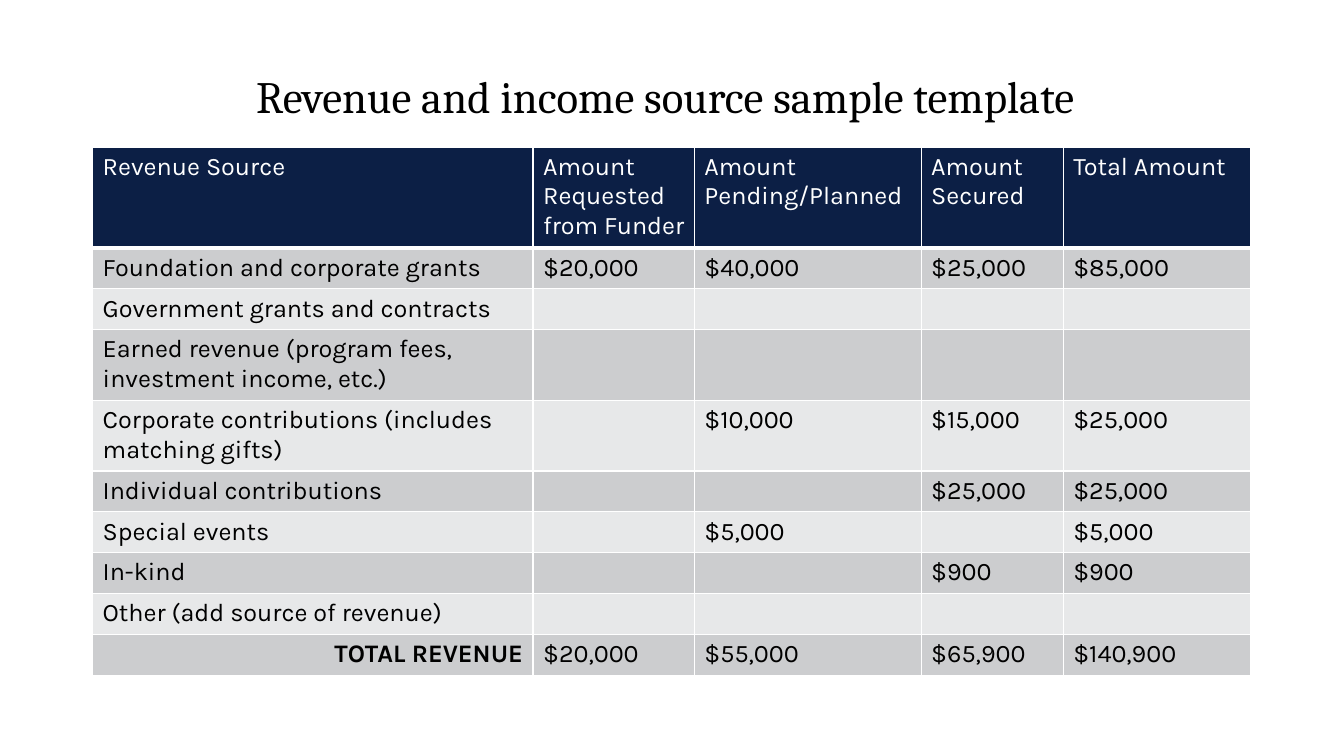
from pptx import Presentation
from pptx.dml.color import RGBColor
from pptx.enum import text
from pptx.oxml import parse_xml
from pptx.oxml.ns import nsdecls
from pptx.util import Pt

COLORS = {"navy": "0C1F45", "dark": "CCCDCF", "light": "E7E8E9",
          "white": "FFFFFF", "black": "000000"}
TITLE = {"name": "Cambria", "size": Pt(32)}
BODY = {"name": "Karla", "size": Pt(18)}

COLUMN_WIDTHS = [314.6, 115.2, 162, 101.5, 133.9]
HEADER_HEIGHT, ROW_HEIGHT, TALL_HEIGHT = 70.2, 29.2, 49.3
TALL_ROWS = (3, 4)
REVENUE = [
    ["Revenue Source", "Amount Requested from Funder", "Amount Pending/Planned",
     "Amount Secured", "Total Amount"],
    ["Foundation and corporate grants", "$20,000", "$40,000", "$25,000", "$85,000"],
    ["Government grants and contracts", "", "", "", ""],
    ["Earned revenue (program fees, investment income, etc.)", "", "", "", ""],
    ["Corporate contributions (includes matching gifts)", "", "$10,000", "$15,000", "$25,000"],
    ["Individual contributions", "", "", "$25,000", "$25,000"],
    ["Special events", "", "$5,000", "", "$5,000"],
    ["In-kind", "", "", "$900", "$900"],
    ["Other (add source of revenue)", "", "", "", ""],
    ["TOTAL REVENUE", "$20,000", "$55,000", "$65,900", "$140,900"],
]


class SlideBuilder:
    def __init__(self, slide, colors):
        self.slide = slide
        self.colors = colors

    def rgb(self, name):
        return RGBColor.from_string(self.colors[name])

    def fill_text(self, p, words, style, color):
        if words:
            p.add_run().text = words
        for font in [p.font] + [r.font for r in p.runs]:
            for key, value in style.items():
                setattr(font, key, value)
            font.color.rgb = self.rgb(color)

    def title(self, words, left, top, width, height):
        sp = self.slide.shapes.add_textbox(Pt(left), Pt(top), Pt(width), Pt(height))
        tf = sp.text_frame
        tf.word_wrap = True
        tf.vertical_anchor = text.MSO_ANCHOR.BOTTOM
        p = tf.paragraphs[0]
        p.alignment = text.PP_ALIGN.CENTER
        p.line_spacing = 0.9
        self.fill_text(p, words, TITLE, "black")

    def borders(self, cell, widths):
        tc_pr = cell._tc.get_or_add_tcPr()
        for i, (side, width) in enumerate(widths.items()):
            tc_pr.insert(i, parse_xml(
                f'<a:ln{side} {nsdecls("a")} w="{Pt(width)}"><a:solidFill>'
                f'<a:srgbClr val="{self.colors["white"]}"/></a:solidFill></a:ln{side}>'))

    def table(self, rows, left, top, widths, heights):
        table = self.slide.shapes.add_table(
            len(rows), len(widths), Pt(left), Pt(top),
            Pt(sum(widths)), Pt(sum(heights))).table
        for column, width in zip(table.columns, widths):
            column.width = Pt(width)
        for i, (row, height) in enumerate(zip(rows, heights)):
            table.rows[i].height = Pt(height)
            header, total = i == 0, i == len(rows) - 1
            fill = "navy" if header else "dark" if i % 2 else "light"
            for j, words in enumerate(row):
                cell = table.cell(i, j)
                cell.fill.solid()
                cell.fill.fore_color.rgb = self.rgb(fill)
                self.borders(cell, {"L": 1, "R": 1, "T": 1, "B": 3 if header else 1})
                p = cell.text_frame.paragraphs[0]
                label = total and j == 0
                if label:
                    p.alignment = text.PP_ALIGN.RIGHT
                self.fill_text(p, words, {**BODY, "bold": label},
                               "white" if header else "black")


def main():
    prs = Presentation()
    prs.slide_width, prs.slide_height = Pt(960), Pt(540)
    s = SlideBuilder(prs.slides.add_slide(prs.slide_layouts[6]), COLORS)

    # Title
    s.title("Revenue and income source sample template", 73.4, 19.4, 804.2, 72)

    # Revenue table
    heights = [HEADER_HEIGHT] + [TALL_HEIGHT if i in TALL_ROWS else ROW_HEIGHT
                                 for i in range(1, len(REVENUE))]
    s.table(REVENUE, 66.2, 105.1, COLUMN_WIDTHS, heights)

    prs.save("out.pptx")


if __name__ == "__main__":
    main()
